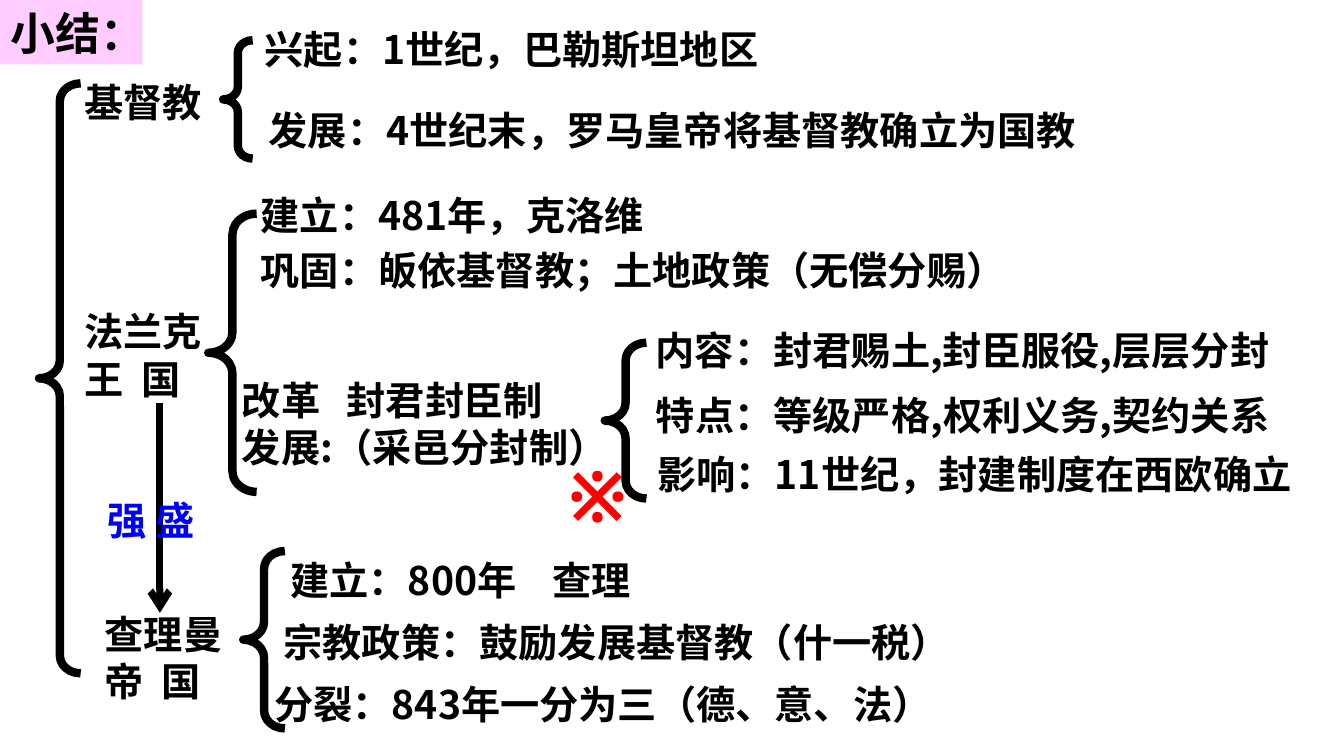
"""Build a summary slide that branches from Christianity to the Frankish and Charlemagne realms."""
from dataclasses import dataclass

from lxml.etree import SubElement
from pptx import Presentation
from pptx.dml.color import RGBColor
from pptx.enum.shapes import MSO_CONNECTOR, MSO_SHAPE
from pptx.enum.text import MSO_ANCHOR, MSO_AUTO_SIZE, PP_ALIGN
from pptx.oxml.ns import qn
from pptx.util import Inches, Pt


@dataclass(frozen=True)
class Theme:
    ink: RGBColor = RGBColor(0, 0, 0)
    accent: RGBColor = RGBColor(0, 0, 255)
    alert: RGBColor = RGBColor(255, 0, 0)
    banner: RGBColor = RGBColor(255, 204, 255)
    font: str = "Noto Sans CJK SC"
    mark_font: str = "Calibri"
    title_size: int = 24
    text_size: int = 21
    mark_size: int = 37
    line_pitch: float = 1.2
    brace_width: float = 4.5
    arrow_width: float = 3.75


theme = Theme()


def write_text(box, lines, color=theme.ink, size=theme.text_size, font=theme.font, wrap=True, tab=None):
    frame_format = {
        "word_wrap": wrap,
        "auto_size": MSO_AUTO_SIZE.NONE,
        "vertical_anchor": MSO_ANCHOR.TOP,
        "margin_left": Inches(0.08),
        "margin_right": Inches(0.08),
        "margin_top": Inches(0.04),
        "margin_bottom": Inches(0.04),
    }
    for name, value in frame_format.items():
        setattr(box.text_frame, name, value)
    for index, line in enumerate(lines):
        para = box.text_frame.add_paragraph() if index else box.text_frame.paragraphs[0]
        para.alignment = PP_ALIGN.LEFT
        para.line_spacing = Pt(size * theme.line_pitch)
        if "\t" in line:
            tabs = SubElement(para._p.get_or_add_pPr(), qn("a:tabLst"))
            SubElement(tabs, qn("a:tab"), pos=str(Inches(tab)), algn="l")
        span = para.add_run()
        span.text = line
        for name, value in {"size": Pt(size), "bold": True, "name": font}.items():
            setattr(span.font, name, value)
        span.font.color.rgb = color
        SubElement(span._r.get_or_add_rPr(), qn("a:ea"), typeface=font)


deck = Presentation()
deck.slide_width = Inches(10)
deck.slide_height = deck.slide_width * 9 // 16
page = deck.slides.add_slide(deck.slide_layouts[5])

title = page.shapes.title
for name, value in {"left": 0, "top": 0, "width": 1.06, "height": 0.48}.items():
    setattr(title, name, Inches(value))
title.fill.solid()
title.fill.fore_color.rgb = theme.banner
write_text(title, ["小结："], size=theme.title_size)

braces = [
    (0.29, 0.62, 0.31, 4.39),
    (1.66, 0.3, 0.22, 0.88),
    (1.55, 1.59, 0.36, 2.07),
    (4.5, 2.55, 0.31, 1.16),
    (1.81, 4.1, 0.31, 1.32),
]
for bounds in braces:
    brace = page.shapes.add_shape(MSO_SHAPE.LEFT_BRACE, *map(Inches, bounds))
    brace.shadow.inherit = False
    brace.fill.background()
    brace.line.color.rgb = theme.ink
    brace.line.width = Pt(theme.brace_width)
    brace.adjustments[0] = 0.427

arrow = page.shapes.add_connector(
    MSO_CONNECTOR.STRAIGHT, Inches(1.19), Inches(3), Inches(1.19), Inches(4.56)
)
arrow.line.color.rgb = theme.ink
arrow.line.width = Pt(theme.arrow_width)
arrow_properties = arrow._element.spPr
SubElement(arrow_properties.find(qn("a:ln")), qn("a:tailEnd"), type="arrow")
SubElement(arrow_properties, qn("a:effectLst"))

single, double = 0.43, 0.78
mark = {"color": theme.alert, "size": theme.mark_size, "font": theme.mark_font, "wrap": False}
labels = [
    (0.55, 0.54, 1.94, single, ["基督教"], {}),
    (1.89, 0.15, 4.74, single, ["兴起：1世纪，巴勒斯坦地区"], {}),
    (1.92, 0.75, 7.02, single, ["发展：4世纪末，罗马皇帝将基督教确立为国教"], {}),
    (0.55, 2.25, 1.94, double, ["法兰克", "王\t国"], {"tab": 0.42}),
    (1.86, 1.38, 5.9, single, ["建立：481年，克洛维"], {}),
    (1.86, 1.79, 6.52, single, ["巩固：皈依基督教；土地政策（无偿分赐）"], {}),
    (1.72, 2.76, 2.89, double, ["改革\t封君封臣制", "发展:（采邑分封制）"], {"tab": 0.78}),
    (4.8, 2.39, 5.43, single, ["内容：封君赐土,封臣服役,层层分封"], {}),
    (4.8, 2.87, 5.91, single, ["特点：等级严格,权利义务,契约关系"], {}),
    (4.81, 3.31, 5.63, single, ["影响：11世纪，封建制度在西欧确立"], {}),
    (0.7, 4.5, 1.94, double, ["查理曼", "帝\t国"], {"tab": 0.42}),
    (2.08, 4.1, 3.31, single, ["建立：800年\t查理"], {"tab": 1.95}),
    (2.03, 4.56, 6.78, single, ["宗教政策：鼓励发展基督教（什一税）"], {}),
    (1.96, 5.02, 6.22, single, ["分裂：843年一分为三（德、意、法）"], {}),
    (0.72, 3.65, 1.19, single, ["强 盛"], {"color": theme.accent}),
    (4.15, 3.33, 0.67, 0.7, ["※"], mark),
]
for left, top, width, height, lines, style in labels:
    box = page.shapes.add_textbox(*map(Inches, (left, top, width, height)))
    write_text(box, lines, **style)

deck.save("out.pptx")
